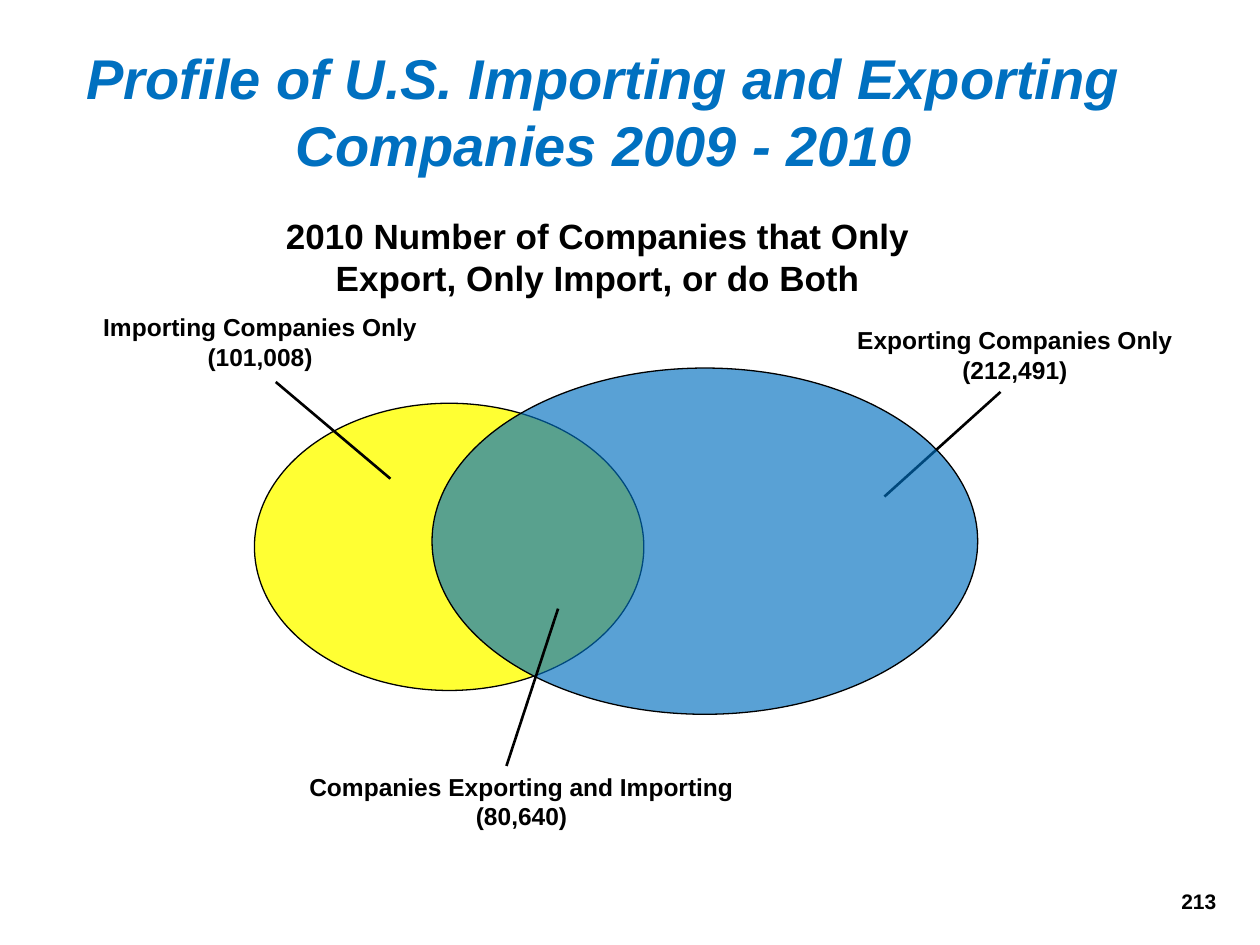
from dataclasses import dataclass

from lxml import etree
from pptx import Presentation
from pptx.dml.color import RGBColor
from pptx.enum import shapes, text
from pptx.oxml.ns import qn
from pptx.util import Cm, Pt


@dataclass(frozen=True)
class Theme:
    font: str = "Arial"
    ink: RGBColor = RGBColor(0x00, 0x00, 0x00)
    accent: RGBColor = RGBColor(0x00, 0x70, 0xC0)
    importers: RGBColor = RGBColor(0xFF, 0xFF, 0x00)
    title_size: int = 32
    subtitle_size: int = 20
    label_size: int = 14
    number_size: int = 12
    outline: float = 0.75
    leader: float = 1.5


THEME = Theme()
CENTER = text.PP_ALIGN.CENTER


def add_text(slide, box, lines, size, color=THEME.ink, italic=False,
             align=CENTER, anchor=text.MSO_ANCHOR.TOP, wrap=True):
    frame = slide.shapes.add_textbox(*map(Cm, box)).text_frame
    frame.word_wrap = wrap
    frame.vertical_anchor = anchor
    for index, line in enumerate(lines):
        paragraph = frame.paragraphs[0] if index == 0 else frame.add_paragraph()
        paragraph.alignment = align
        run = paragraph.add_run()
        run.text = line
        run.font.name = THEME.font
        run.font.size = Pt(size)
        run.font.bold = True
        run.font.italic = italic
        run.font.color.rgb = color


def add_label(slide, box, group, count, wrap=False):
    add_text(slide, box, [group, f"({count:,})"], THEME.label_size, wrap=wrap)


def add_leader(slide, start, end):
    """Draw the line that ties a label to its region."""
    leader = slide.shapes.add_connector(
        shapes.MSO_CONNECTOR.STRAIGHT, *map(Cm, start + end))
    leader.line.color.rgb = THEME.ink
    leader.line.width = Pt(THEME.leader)
    etree.SubElement(leader._element.spPr, qn("a:effectLst"))


def add_set(slide, box, color, opacity):
    """Draw one translucent ellipse of the Venn diagram; opacity in percent."""
    ellipse = slide.shapes.add_shape(shapes.MSO_SHAPE.OVAL, *map(Cm, box))
    ellipse.shadow.inherit = False
    ellipse.fill.solid()
    ellipse.fill.fore_color.rgb = color
    fill_color = ellipse._element.spPr.find(qn("a:solidFill"))[0]
    etree.SubElement(fill_color, qn("a:alpha"), val=str(opacity * 1000))
    ellipse.line.color.rgb = THEME.ink
    ellipse.line.width = Pt(THEME.outline)


def main():
    deck = Presentation()
    deck.slide_width, deck.slide_height = Cm(25.4), Cm(19.05)
    slide = deck.slides.add_slide(deck.slide_layouts[6])

    add_text(slide, (18.85, 17.65, 5.92, 1.02), ["213"], THEME.number_size,
             align=text.PP_ALIGN.RIGHT, anchor=text.MSO_ANCHOR.MIDDLE)
    add_text(slide, (1.47, 0.64, 21.4, 3.18),
             ["Profile of U.S. Importing and Exporting Companies 2009 - 2010"],
             THEME.title_size, THEME.accent, italic=True,
             anchor=text.MSO_ANCHOR.MIDDLE)
    add_text(slide, (5.28, 4.19, 13.54, 1.96),
             ["2010 Number of Companies that Only Export, Only Import, or do Both"],
             THEME.subtitle_size)

    add_label(slide, (1.32, 6.17, 7.85, 1.45),
              "Importing Companies Only", 101008, wrap=True)
    add_label(slide, (17.02, 6.43, 6.88, 1.45),
              "Exporting Companies Only", 212491)
    add_label(slide, (5.97, 15.44, 9.09, 1.45),
              "Companies Exporting and Importing", 80640)

    # The exporters' leader lies beneath the translucent ellipses.
    add_leader(slide, (20.17, 7.9), (17.83, 10.01))
    add_set(slide, (5.13, 8.13, 7.85, 5.79), THEME.importers, 80)
    add_set(slide, (8.71, 7.42, 11, 6.98), THEME.accent, 65)
    add_leader(slide, (5.56, 7.7), (7.87, 9.65))
    add_leader(slide, (10.21, 15.44), (11.25, 12.27))

    deck.save("out.pptx")


if __name__ == "__main__":
    main()
